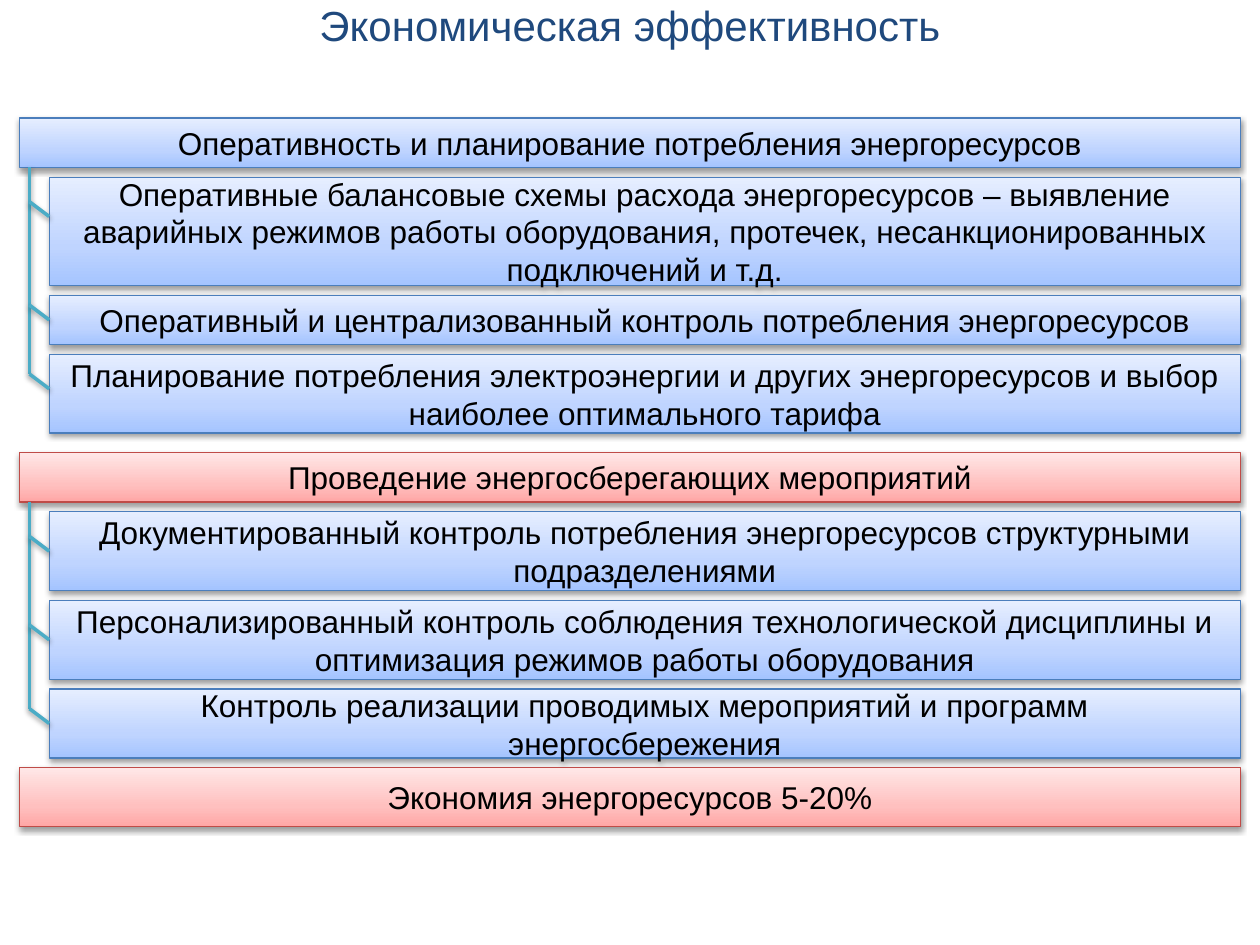
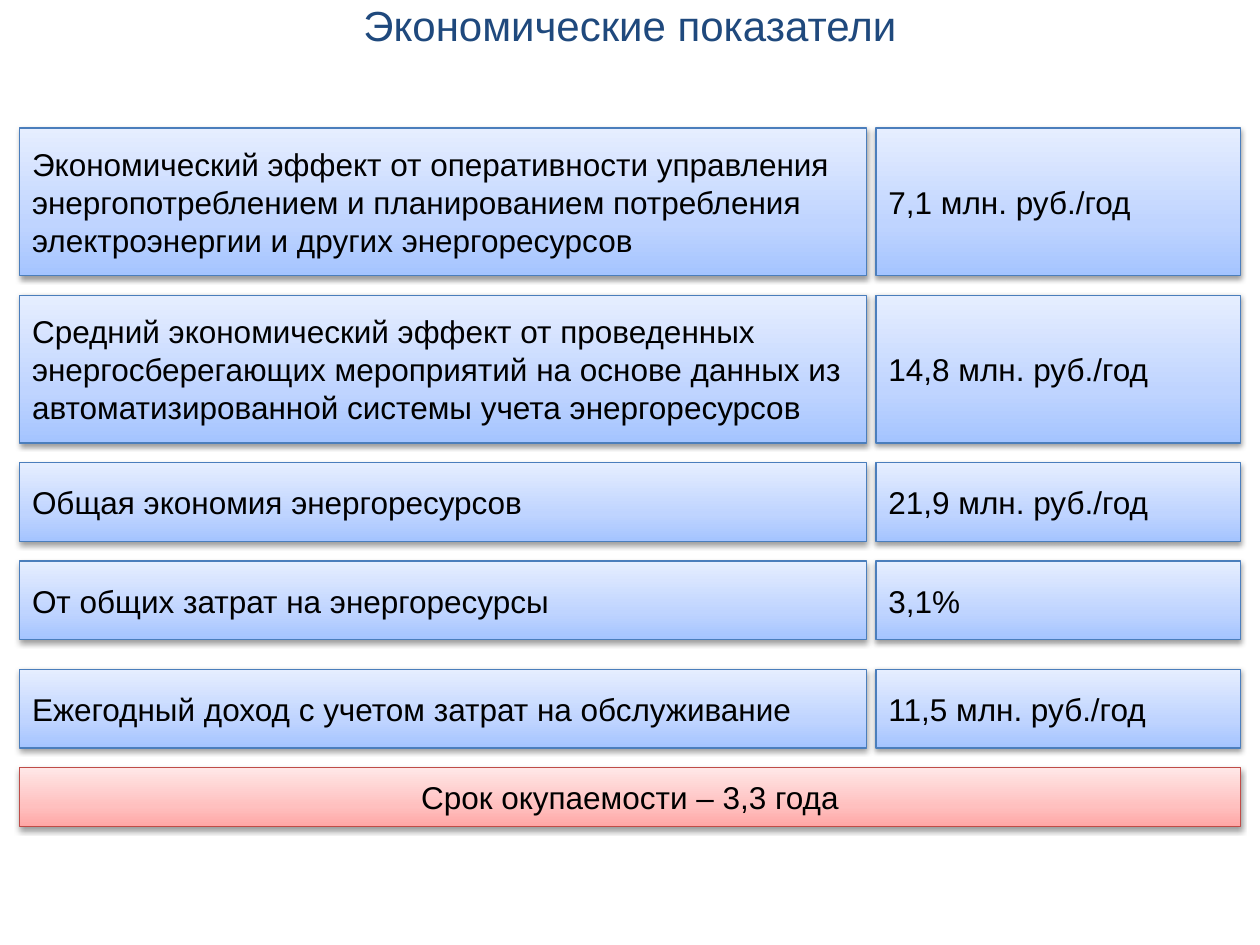
from copy import deepcopy

from lxml import etree
from pptx import Presentation
from pptx.dml.color import RGBColor
from pptx.enum.shapes import MSO_CONNECTOR, MSO_SHAPE
from pptx.enum.text import MSO_ANCHOR, PP_ALIGN
from pptx.oxml.ns import qn
from pptx.util import Inches, Pt

RECTANGLE = MSO_SHAPE.RECTANGLE
STRAIGHT = MSO_CONNECTOR.STRAIGHT
MIDDLE = MSO_ANCHOR.MIDDLE
CENTER, LEFT = PP_ALIGN.CENTER, PP_ALIGN.LEFT

FONT = "Arial"
COLORS = {
    "title": "1F497D",
    "text": "000000",
    "shadow": "000000",
    "branch": "4BACC6",
    "blue_line": "4B7EBC",
    "red_line": "BF4C48",
}
GRADIENTS = {
    "blue": ((0, "A4C4FF"), (0.35, "BFD4FF"), (1, "E6EEFF")),
    "red": ((0, "FFA6A5"), (0.35, "FFC0BF"), (1, "FFE7E7")),
}

# All positions below are in grid units: the slide is 128 units wide.
COLUMNS = 128
BAND_LEFT, BAND_WIDTH = 2, 124
CHILD_LEFT, CHILD_WIDTH = 5, 121
STEM_X, BRANCH_RISE = 3, 1.5
LABEL_WIDTH, VALUE_LEFT, VALUE_WIDTH = 86, 89, 37
BAND_HEIGHT, RESULT_TOP, RESULT_HEIGHT = 5, 78, 6

# Each child: text, height, distance from its top to the branch end.
GROUPS = [
    (12, "blue", "Оперативность и планирование потребления энергоресурсов", [
        ("Оперативные балансовые схемы расхода энергоресурсов – выявление аварийных "
         "режимов работы оборудования, протечек, несанкционированных подключений и т.д.", 11, 4),
        ("Оперативный и централизованный контроль потребления энергоресурсов", 5, 2.5),
        ("Планирование потребления электроэнергии и других энергоресурсов "
         "и выбор наиболее оптимального тарифа", 8, 3.5),
    ]),
    (46, "red", "Проведение энергосберегающих мероприятий", [
        ("Документированный контроль потребления энергоресурсов "
         "структурными подразделениями", 8, 4),
        ("Персонализированный контроль соблюдения технологической дисциплины "
         "и оптимизация режимов работы оборудования", 8, 4),
        ("Контроль реализации проводимых мероприятий и программ энергосбережения", 7, 3.5),
    ]),
]

# Each indicator: top, height, label, value.
INDICATORS = [
    (13, 15, "Экономический эффект от оперативности управления энергопотреблением "
     "и планированием потребления электроэнергии и других энергоресурсов",
     "7,1 млн. руб./год"),
    (30, 15, "Средний экономический эффект от проведенных энергосберегающих мероприятий "
     "на основе данных из автоматизированной системы учета энергоресурсов",
     "14,8 млн. руб./год"),
    (47, 8, "Общая экономия энергоресурсов", "21,9 млн. руб./год"),
    (57, 8, "От общих затрат на энергоресурсы", "3,1%"),
    (68, 8, "Ежегодный доход с учетом затрат на обслуживание", "11,5 млн. руб./год"),
]


def grid(units):
    return Inches(units * 10 / COLUMNS)


def rgb(name):
    return RGBColor.from_string(COLORS[name])


def add_shadow(shape):
    """Append a soft downward shadow; call after the line has been set."""
    properties = shape._element.spPr
    effects = etree.SubElement(properties, qn("a:effectLst"))
    shadow = etree.SubElement(effects, qn("a:outerShdw"), blurRad="40000",
                              dist="20000", dir="5400000", rotWithShape="0")
    color = etree.SubElement(shadow, qn("a:srgbClr"), val=COLORS["shadow"])
    etree.SubElement(color, qn("a:alpha"), val="38000")


class Deck:
    def __init__(self):
        self.presentation = Presentation()
        self.presentation.slide_width = Inches(10)
        self.presentation.slide_height = Inches(7.5)
        self.slide = None

    def new_slide(self, title):
        self.slide = self.presentation.slides.add_slide(self.presentation.slide_layouts[6])
        box = self.slide.shapes.add_textbox(0, 0, Inches(10), grid(BAND_HEIGHT))
        self.set_text(box, title, 24, "title", CENTER)

    def set_text(self, shape, text, size, color, alignment):
        frame = shape.text_frame
        frame.word_wrap = True
        frame.vertical_anchor = MIDDLE
        paragraph = frame.paragraphs[0]
        paragraph.text = text
        paragraph.alignment = alignment
        paragraph.font.name = FONT
        paragraph.font.size = Pt(size)
        paragraph.font.color.rgb = rgb(color)

    def panel(self, left, top, width, height, text, tone="blue", alignment=CENTER):
        """Add a gradient rectangle with text, placed in grid units."""
        shape = self.slide.shapes.add_shape(
            RECTANGLE, grid(left), grid(top), grid(width), grid(height))
        shape.fill.gradient()
        shape.fill.gradient_angle = 90
        stops = shape._element.spPr.find(".//" + qn("a:gsLst"))
        stops.insert(1, deepcopy(stops[0]))
        for stop, (position, color) in zip(shape.fill.gradient_stops, GRADIENTS[tone]):
            stop.position = position
            stop.color.rgb = RGBColor.from_string(color)
        shape.line.color.rgb = rgb(tone + "_line")
        shape.line.width = Pt(0.75)
        add_shadow(shape)
        self.set_text(shape, text, 18, "text", alignment)

    def line(self, start_x, start_y, end_x, end_y):
        connector = self.slide.shapes.add_connector(
            STRAIGHT, grid(start_x), grid(start_y), grid(end_x), grid(end_y))
        connector.line.color.rgb = rgb("branch")
        connector.line.width = Pt(2)
        add_shadow(connector)

    def result(self, text):
        self.panel(BAND_LEFT, RESULT_TOP, BAND_WIDTH, RESULT_HEIGHT, text, "red")

    def group(self, top, tone, heading, children):
        """Add a heading band with child panels hanging from a stem."""
        self.panel(BAND_LEFT, top, BAND_WIDTH, BAND_HEIGHT, heading, tone)
        stem_top = top + BAND_HEIGHT
        child_top = stem_top + 1
        branch_ends = []
        for text, height, branch_offset in children:
            self.panel(CHILD_LEFT, child_top, CHILD_WIDTH, height, text)
            branch_ends.append(child_top + branch_offset)
            child_top += height + 1
        self.line(STEM_X, stem_top, STEM_X, branch_ends[-1] - BRANCH_RISE)
        for end in branch_ends:
            self.line(CHILD_LEFT, end, STEM_X, end - BRANCH_RISE)


def main():
    deck = Deck()

    deck.new_slide("Экономическая эффективность")
    for group in GROUPS:
        deck.group(*group)
    deck.result("Экономия энергоресурсов 5-20%")

    deck.new_slide("Экономические показатели")
    for top, height, label, value in INDICATORS:
        deck.panel(BAND_LEFT, top, LABEL_WIDTH, height, label, alignment=LEFT)
        deck.panel(VALUE_LEFT, top, VALUE_WIDTH, height, value, alignment=LEFT)
    deck.result("Срок окупаемости – 3,3 года")

    deck.presentation.save("out.pptx")


if __name__ == "__main__":
    main()
